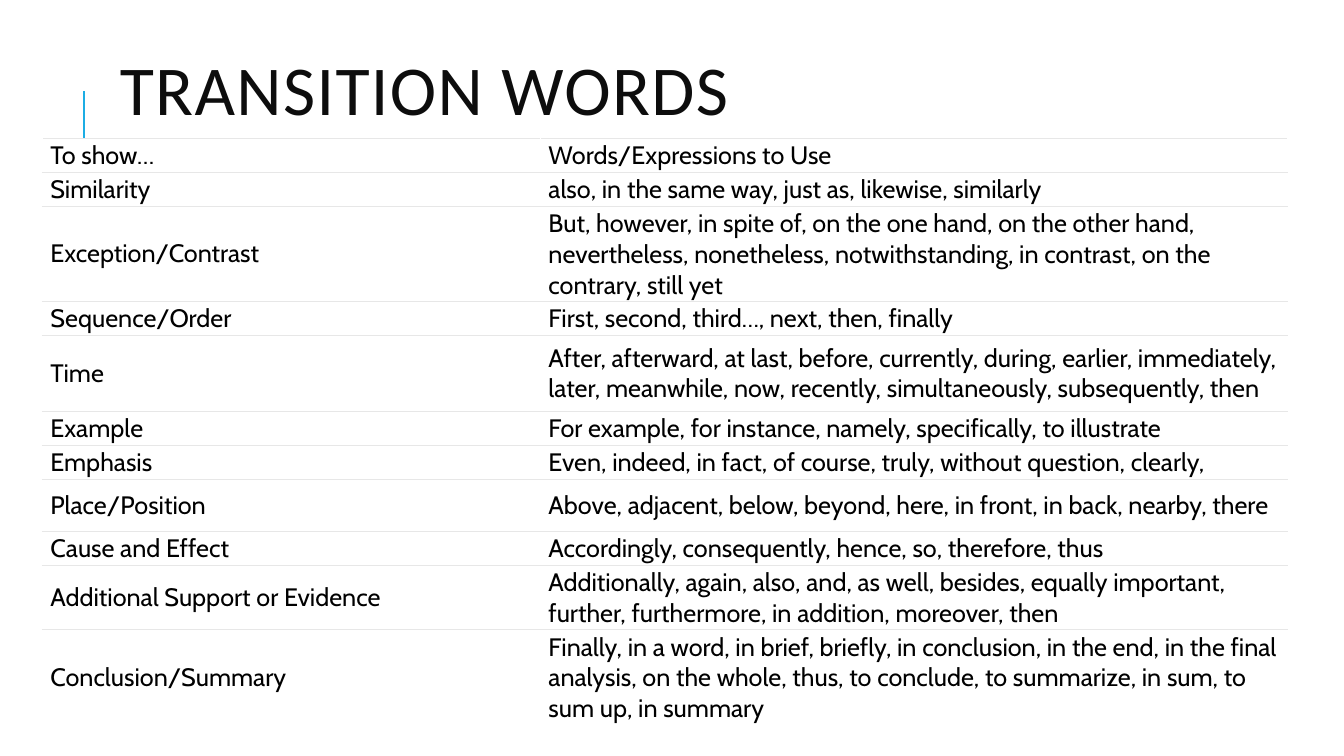
from lxml.etree import SubElement
from pptx import Presentation
from pptx.dml.color import RGBColor
from pptx.enum.shapes import MSO_CONNECTOR
from pptx.enum.text import MSO_ANCHOR
from pptx.oxml import parse_xml
from pptx.oxml.ns import nsdecls, qn
from pptx.util import Inches, Pt

COLORS = {
    "accent": "1CADE4",
    "title": "0D0D0D",
    "text": "000000",
    "cell": "FFFFFF",
    "border": "E7E7E7",
}
TITLE = "TRANSITION WORDS"
COLUMN_WIDTHS = (4.94, 7.41)
TRANSITIONS = [
    (0.27, "To show…", "Words/Expressions to Use"),
    (0.27, "Similarity", "also, in the same way, just as, likewise, similarly"),
    (0.75, "Exception/Contrast",
     "But, however, in spite of, on the one hand, on the other hand, nevertheless, "
     "nonetheless, notwithstanding, in contrast, on the contrary, still yet"),
    (0.27, "Sequence/Order", "First, second, third…, next, then, finally"),
    (0.75, "Time",
     "After, afterward, at last, before, currently, during, earlier, immediately, "
     "later, meanwhile, now, recently, simultaneously, subsequently, then"),
    (0.27, "Example", "For example, for instance, namely, specifically, to illustrate"),
    (0.31, "Emphasis", "Even, indeed, in fact, of course, truly, without question, clearly,"),
    (0.51, "Place/Position",
     "Above, adjacent, below, beyond, here, in front, in back, nearby, there"),
    (0.27, "Cause and Effect", "Accordingly, consequently, hence, so, therefore, thus"),
    (0.51, "Additional Support or Evidence",
     "Additionally, again, also, and, as well, besides, equally important, further, "
     "furthermore, in addition, moreover, then"),
    (0.75, "Conclusion/Summary",
     "Finally, in a word, in brief, briefly, in conclusion, in the end, in the final "
     "analysis, on the whole, thus, to conclude, to summarize, in sum, to sum up, in summary"),
]


def color(name):
    return RGBColor.from_string(COLORS[name])


def style_run(paragraph, font_name, size, color_name):
    font = paragraph.runs[0].font
    font.name = font_name
    font.size = Pt(size)
    font.color.rgb = color(color_name)
    return paragraph.runs[0]


def add_title(slide):
    line = slide.shapes.add_connector(
        MSO_CONNECTOR.STRAIGHT, Inches(0.83), Inches(1.9), Inches(0.83), Inches(0.9))
    line.line.color.rgb = color("accent")
    line.line.width = Pt(1.5)
    SubElement(line._element.spPr, qn("a:effectLst"))

    box = slide.shapes.add_textbox(Inches(1.09), Inches(0.13), Inches(10.63), Inches(1.64))
    frame = box.text_frame
    frame.word_wrap = True
    frame.vertical_anchor = MSO_ANCHOR.MIDDLE
    frame.text = TITLE
    frame.paragraphs[0].line_spacing = 0.8
    run = style_run(frame.paragraphs[0], "Calibri", 50, "title")
    run.font._element.set("spc", "100")


def add_borders(cell, sides):
    properties = cell._tc.get_or_add_tcPr()
    for position, side in enumerate(sides):
        properties.insert(position, parse_xml(
            f'<a:ln{side} {nsdecls("a")} w="{Pt(0.75)}"><a:solidFill>'
            f'<a:srgbClr val="{COLORS["border"]}"/></a:solidFill></a:ln{side}>'))


def fill_cell(cell, text, sides):
    cell.text = text
    cell.vertical_anchor = MSO_ANCHOR.MIDDLE
    cell.margin_left = cell.margin_right = Inches(0.08)
    cell.margin_top = cell.margin_bottom = Inches(0.02)
    cell.fill.solid()
    cell.fill.fore_color.rgb = color("cell")
    style_run(cell.text_frame.paragraphs[0], "Cabin", 18, "text")
    add_borders(cell, sides)


def add_transition_table(slide):
    total_height = sum(height for height, *_ in TRANSITIONS)
    table = slide.shapes.add_table(
        len(TRANSITIONS), len(COLUMN_WIDTHS), Inches(0.42), Inches(1.37),
        Inches(sum(COLUMN_WIDTHS)), Inches(total_height)).table
    table.first_row = False
    table.horz_banding = False
    for column, width in zip(table.columns, COLUMN_WIDTHS):
        column.width = Inches(width)
    last = len(TRANSITIONS) - 1
    for index, (height, *texts) in enumerate(TRANSITIONS):
        table.rows[index].height = Inches(height)
        for cell, text in zip(table.rows[index].cells, texts):
            fill_cell(cell, text, "T" if index == last else "TB")


def main():
    presentation = Presentation()
    presentation.slide_width = Inches(13.33)
    presentation.slide_height = Inches(7.5)
    slide = presentation.slides.add_slide(presentation.slide_layouts[6])
    add_title(slide)
    add_transition_table(slide)
    presentation.save("out.pptx")


if __name__ == "__main__":
    main()
